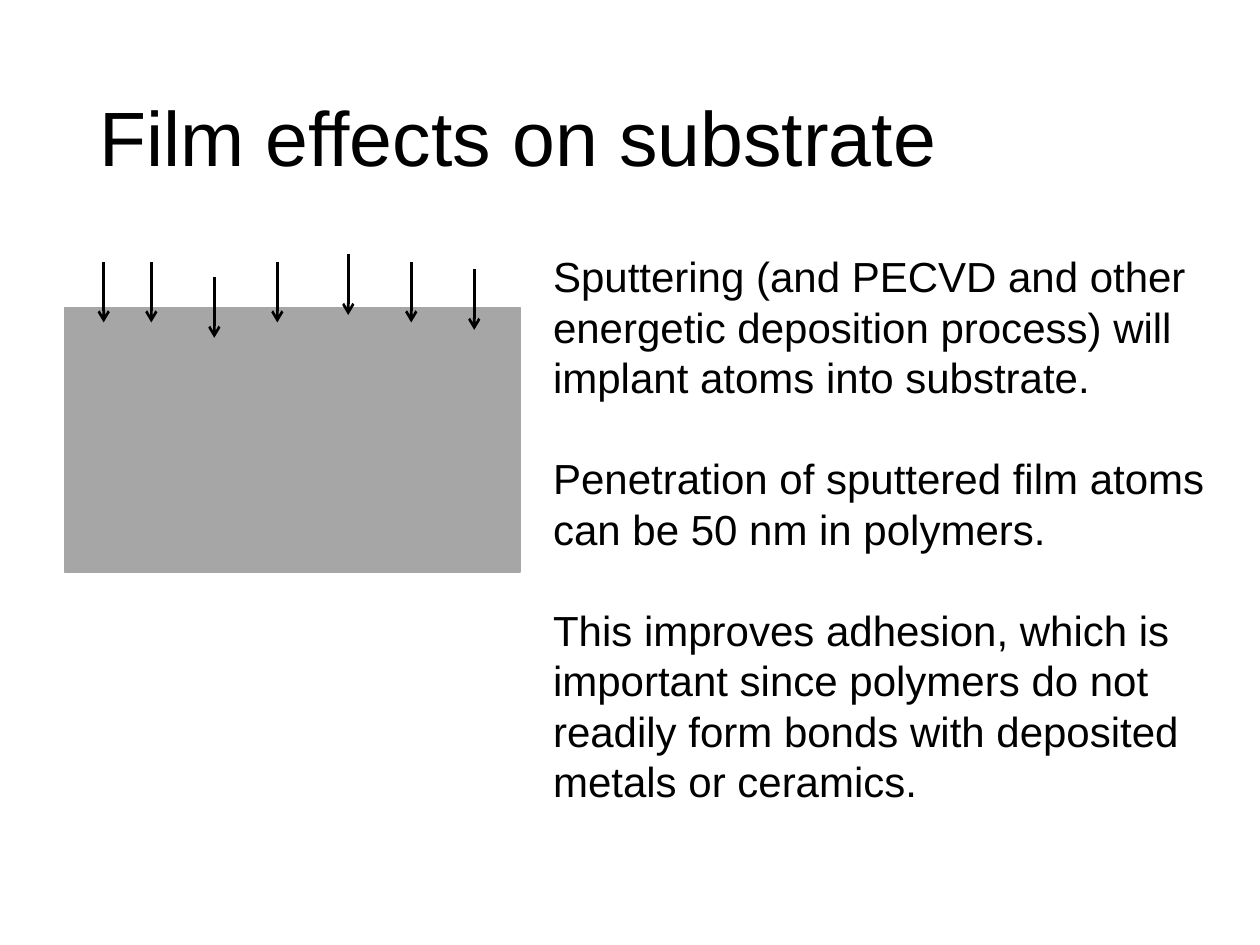
import dataclasses

import pptx
import pptx.dml.color
import pptx.enum.shapes
import pptx.enum.text
import pptx.oxml.ns
import pptx.util
from lxml import etree

Cm = pptx.util.Cm
Pt = pptx.util.Pt


@dataclasses.dataclass(frozen=True)
class Theme:
    font: str = "Arial"
    ink: str = "000000"
    substrate: str = "A6A6A6"
    title_size: float = 44
    body_size: float = 24
    body_pitch: float = 28.85
    edge: float = 1
    arrow: float = 1.5


THEME = Theme()

EFFECTS = [
    "Sputtering (and PECVD and other energetic deposition process) will implant atoms into substrate.",
    "Penetration of sputtered film atoms can be 50 nm in polymers.",
    "This improves adhesion, which is important since polymers do not readily form bonds with deposited metals or ceramics.",
]

ATOM_TRACKS = [
    (0.79, 0.15), (1.75, 0.15), (3.02, 0.46), (4.29, 0.15),
    (5.72, 0), (6.99, 0.15), (8.26, 0.3),
]


def color(value):
    return pptx.dml.color.RGBColor.from_string(value)


def add_text(page, box, paragraphs, *, size, line_spacing, space_after=0,
             anchor=pptx.enum.text.MSO_ANCHOR.TOP):
    frame = page.shapes.add_textbox(*map(Cm, box)).text_frame
    frame.word_wrap = True
    frame.vertical_anchor = anchor
    for index, text in enumerate(paragraphs):
        para = frame.paragraphs[0] if index == 0 else frame.add_paragraph()
        para.line_spacing = line_spacing
        if index < len(paragraphs) - 1:
            para.space_after = Pt(space_after)
        span = para.add_run()
        span.text = text
        span.font.name = THEME.font
        span.font.size = Pt(size)
        span.font.color.rgb = color(THEME.ink)


def add_arrow(page, x, top, length):
    arrow = page.shapes.add_connector(
        pptx.enum.shapes.MSO_CONNECTOR.STRAIGHT,
        Cm(x), Cm(top), Cm(x), Cm(top + length))
    arrow.line.color.rgb = color(THEME.ink)
    arrow.line.width = Pt(THEME.arrow)
    qn = pptx.oxml.ns.qn
    properties = arrow.element.find(qn("p:spPr"))
    etree.SubElement(properties.find(qn("a:ln")), qn("a:tailEnd"), type="arrow")
    etree.SubElement(properties, qn("a:effectLst"))


def add_title(page, box):
    add_text(page, box, ["Film effects on substrate"], size=THEME.title_size,
             line_spacing=0.9, anchor=pptx.enum.text.MSO_ANCHOR.MIDDLE)


def add_implantation(page, box):
    left, top, width, height = box
    substrate_top = 1.07
    substrate = page.shapes.add_shape(
        pptx.enum.shapes.MSO_SHAPE.RECTANGLE,
        Cm(left), Cm(top + substrate_top), Cm(width), Cm(height - substrate_top))
    substrate.shadow.inherit = False
    substrate.fill.solid()
    substrate.fill.fore_color.rgb = color(THEME.substrate)
    substrate.line.color.rgb = color(THEME.substrate)
    substrate.line.width = Pt(THEME.edge)
    for x, drop in ATOM_TRACKS:
        add_arrow(page, left + x, top + drop, 1.22)


def add_effects(page, box):
    add_text(page, box, EFFECTS, size=THEME.body_size,
             line_spacing=Pt(THEME.body_pitch), space_after=THEME.body_pitch)


def main():
    deck = pptx.Presentation()
    deck.slide_width, deck.slide_height = Cm(25.4), Cm(19.05)
    page = deck.slides.add_slide(deck.slide_layouts[6])
    add_title(page, (1.75, 1.02, 21.89, 3.68))
    add_implantation(page, (1.3, 5.13, 9.19, 6.4))
    add_effects(page, (10.9, 4.93, 14, 11.53))
    deck.save("out.pptx")


if __name__ == "__main__":
    main()
